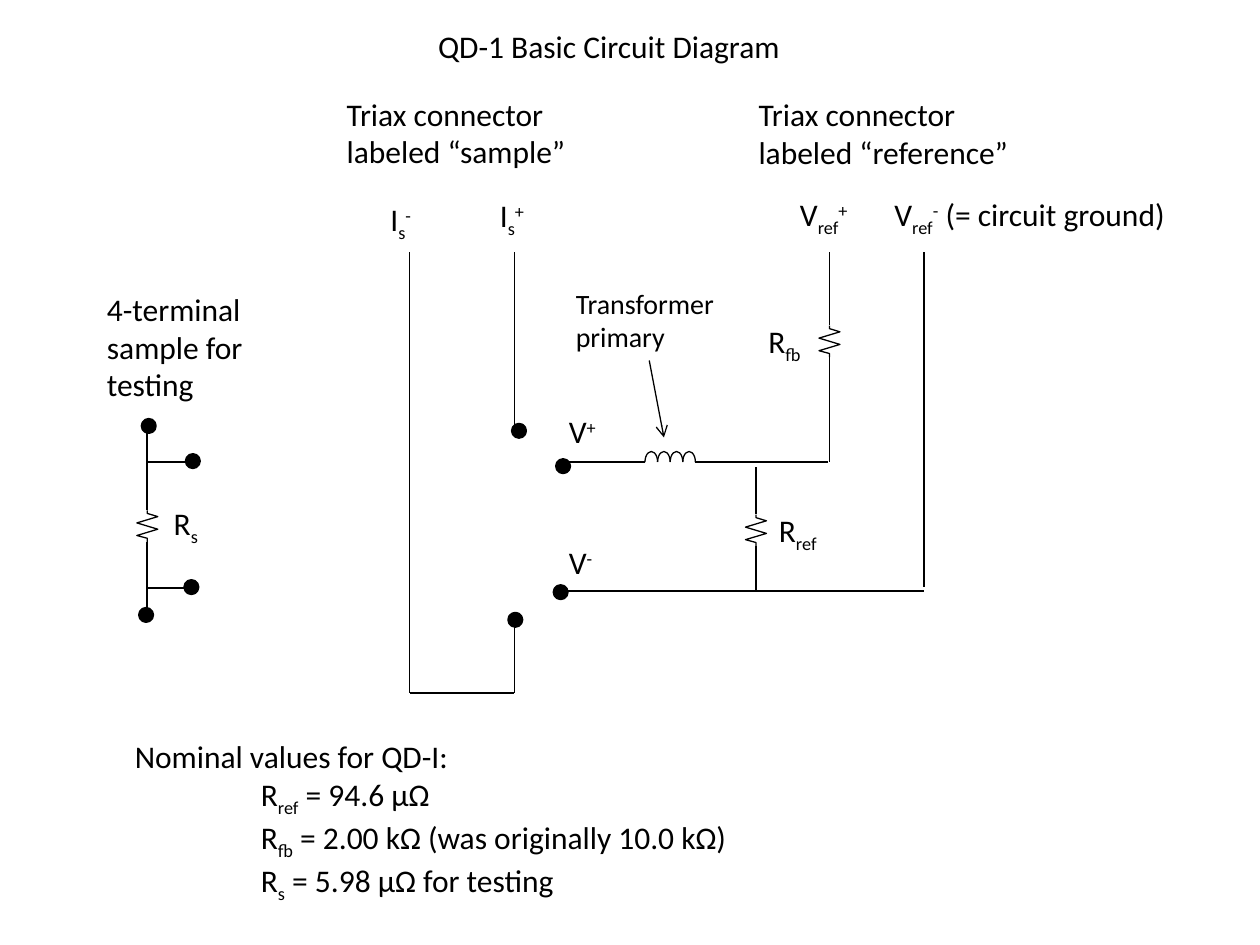
from dataclasses import dataclass

from lxml import etree
from pptx import Presentation
from pptx.dml.color import RGBColor
from pptx.enum import shapes, text
from pptx.oxml.ns import qn
from pptx.util import Pt


@dataclass(frozen=True)
class Theme:
    ink: RGBColor = RGBColor(0, 0, 0)
    font: str = "Calibri"
    body: int = 18
    small: int = 16
    wire: float = 1
    symbol: float = 0.75
    dot: float = 2


THEME = Theme()
SUBSCRIPT, SUPERSCRIPT = -25000, 30000

# Columns and rows of the circuit, in points
SAMPLE_MINUS, SAMPLE_PLUS, VOLTAGE = 234, 294, 324
R_REF, R_FB, GROUND = 432, 474, 528
TOP, UPPER, LOWER, BOTTOM = 144, 264, 337.7, 396
R_S = 84.2

WIRES = [
    (SAMPLE_MINUS, TOP, SAMPLE_MINUS, BOTTOM),
    (SAMPLE_MINUS, BOTTOM, SAMPLE_PLUS, BOTTOM),
    (SAMPLE_PLUS, TOP, SAMPLE_PLUS, 242.6),
    (SAMPLE_PLUS, 354, SAMPLE_PLUS, BOTTOM),
    (VOLTAGE, UPPER, 368.6, UPPER),
    (397.4, UPPER, 473, UPPER),
    (VOLTAGE, LOWER, GROUND, LOWER),
    (R_FB, TOP, R_FB, 186),
    (R_FB, 204, R_FB, UPPER),
    (R_REF, 267, R_REF, 294),
    (R_REF, 312, R_REF, LOWER),
    (GROUND, TOP, GROUND, 335.5),
    (R_S, 242.6, R_S, 291.6),
    (R_S, 309.6, R_S, 354),
    (R_S, UPPER, 113.8, UPPER),
    (R_S, 336, 113.8, 336),
]
RESISTORS = [(R_REF, 294), (R_FB, 186), (R_S, 291.6)]
TERMINALS = [
    (296.6, 246.2), (294.5, 354.2), (320.4, 338.4), (321.8, 266.4),
    (85, 243.4), (83.5, 351.4), (109.4, 335.5), (110.2, 263.5),
]

# Symbols: left, top, width, base letter, subscript, superscript, remainder
SYMBOLS = [
    (216, 111, 30, "I", "s", "-", ""),
    (278.6, 108.7, 30, "I", "s", "+", ""),
    (450, 108, 48, "V", "ref", "+", ""),
    (504, 108, 180, "V", "ref", "-", " (= circuit ground)"),
    (318, 232, 35, "V", "", "+", ""),
    (318, 306.7, 35, "V", "", "-", ""),
    (432, 180.7, 42, "R", "fb", "", ""),
    (438, 288.7, 42, "R", "ref", "", ""),
    (92.2, 284.4, 42, "R", "s", "", ""),
]
# Captions: left, top, width, height, size, wording
CAPTIONS = [
    (54, 162, 102, 72.7, THEME.body, "4-terminal sample for testing"),
    (322, 160, 98.6, 46, THEME.small, "Transformer primary"),
    (191, 50.5, 145.4, 51, THEME.body, "Triax connector labeled “sample”"),
    (426.4, 51, 169, 51, THEME.body, "Triax connector labeled “reference”"),
]
NOMINAL_VALUES = [
    ("R", "ref", "", " = 94.6 μΩ"),
    ("R", "fb", "", " = 2.00 kΩ (was originally 10.0 kΩ)"),
    ("R", "s", "", " = 5.98 μΩ for testing"),
]


def style_line(shape, width):
    shape.line.color.rgb = THEME.ink
    shape.line.width = Pt(width)


def style_paragraph(paragraph, size=THEME.body):
    for run in paragraph.runs:
        run.font.name = THEME.font
        run.font.size = Pt(size)
        run.font.color.rgb = THEME.ink


def add_line(slide, x1, y1, x2, y2, width=THEME.wire):
    line = slide.shapes.add_connector(
        shapes.MSO_CONNECTOR.STRAIGHT, Pt(x1), Pt(y1), Pt(x2), Pt(y2))
    style_line(line, width)
    etree.SubElement(line._element.spPr, qn("a:effectLst"))
    return line


def add_arrow(slide, *ends):
    arrow = add_line(slide, *ends, width=THEME.symbol)
    etree.SubElement(arrow.line._get_or_add_ln(), qn("a:tailEnd"), type="arrow")


def add_resistor(slide, x, top):
    """Draw a vertical zigzag, 18 points high, centred on x."""
    zigzag = [(0, 1.8), (6, 3.6), (-6, 7.2), (6, 10.8), (-6, 14.4), (0, 16), (0, 18)]
    builder = slide.shapes.build_freeform(Pt(x), Pt(top))
    builder.add_line_segments([(Pt(x + dx), Pt(top + dy)) for dx, dy in zigzag], close=False)
    shape = builder.convert_to_shape()
    shape.shadow.inherit = False
    shape.fill.background()
    style_line(shape, THEME.symbol)


def add_coil(slide, left, baseline, turns=4, pitch=7.2, height=12):
    for turn in range(turns):
        arc = slide.shapes.add_shape(
            shapes.MSO_SHAPE.ARC, Pt(left + turn * pitch), Pt(baseline - height / 2),
            Pt(pitch), Pt(height))
        arc.adjustments[0] = 108  # 180 degrees, in units of 100000/60000
        arc.adjustments[1] = 0
        arc.shadow.inherit = False
        arc.fill.background()
        style_line(arc, THEME.symbol)


def add_terminal(slide, x, y, diameter=7.2):
    dot = slide.shapes.add_shape(
        shapes.MSO_SHAPE.OVAL, Pt(x - diameter / 2), Pt(y - diameter / 2),
        Pt(diameter), Pt(diameter))
    dot.shadow.inherit = False
    dot.fill.solid()
    dot.fill.fore_color.rgb = THEME.ink
    style_line(dot, THEME.dot)


def add_text_frame(slide, left, top, width, height):
    frame = slide.shapes.add_textbox(Pt(left), Pt(top), Pt(width), Pt(height)).text_frame
    frame.word_wrap = True
    return frame


def write_symbol(paragraph, letter, subscript, superscript, remainder):
    parts = [(letter, 0), (subscript, SUBSCRIPT), (superscript, SUPERSCRIPT), (remainder, 0)]
    for wording, baseline in parts:
        if wording:
            run = paragraph.add_run()
            run.text = wording
            if baseline:
                run.font._element.set("baseline", str(baseline))
    style_paragraph(paragraph)


def add_caption(slide, left, top, width, height, size, wording):
    frame = add_text_frame(slide, left, top, width, height)
    frame.text = wording
    style_paragraph(frame.paragraphs[0], size)


def add_nominal_values(slide):
    frame = add_text_frame(slide, 70, 417.6, 490, 116.6)
    frame.text = "Nominal values for QD-I:"
    style_paragraph(frame.paragraphs[0])
    for value in NOMINAL_VALUES:
        paragraph = frame.add_paragraph()
        paragraph._p.get_or_add_pPr().set("marL", str(Pt(72)))
        write_symbol(paragraph, *value)


def set_title(slide, wording):
    title = slide.shapes.title
    title.left, title.top, title.width, title.height = Pt(156), Pt(12), Pt(384), Pt(29)
    frame = title.text_frame
    frame.text = wording
    frame.vertical_anchor = text.MSO_ANCHOR.TOP
    frame.auto_size = text.MSO_AUTO_SIZE.NONE
    frame.paragraphs[0].alignment = text.PP_ALIGN.CENTER
    style_paragraph(frame.paragraphs[0])


def main():
    presentation = Presentation()
    presentation.slide_width, presentation.slide_height = Pt(720), Pt(540)
    slide = presentation.slides.add_slide(presentation.slide_layouts[5])
    set_title(slide, "QD-1 Basic Circuit Diagram")
    for wire in WIRES:
        add_line(slide, *wire)
    for resistor in RESISTORS:
        add_resistor(slide, *resistor)
    add_coil(slide, 368.6, UPPER)
    for terminal in TERMINALS:
        add_terminal(slide, *terminal)
    for left, top, width, *symbol in SYMBOLS:
        frame = add_text_frame(slide, left, top, width, 29)
        write_symbol(frame.paragraphs[0], *symbol)
    for caption in CAPTIONS:
        add_caption(slide, *caption)
    add_arrow(slide, 371, 206, 379.4, 250)
    add_nominal_values(slide)
    presentation.save("out.pptx")


if __name__ == "__main__":
    main()
